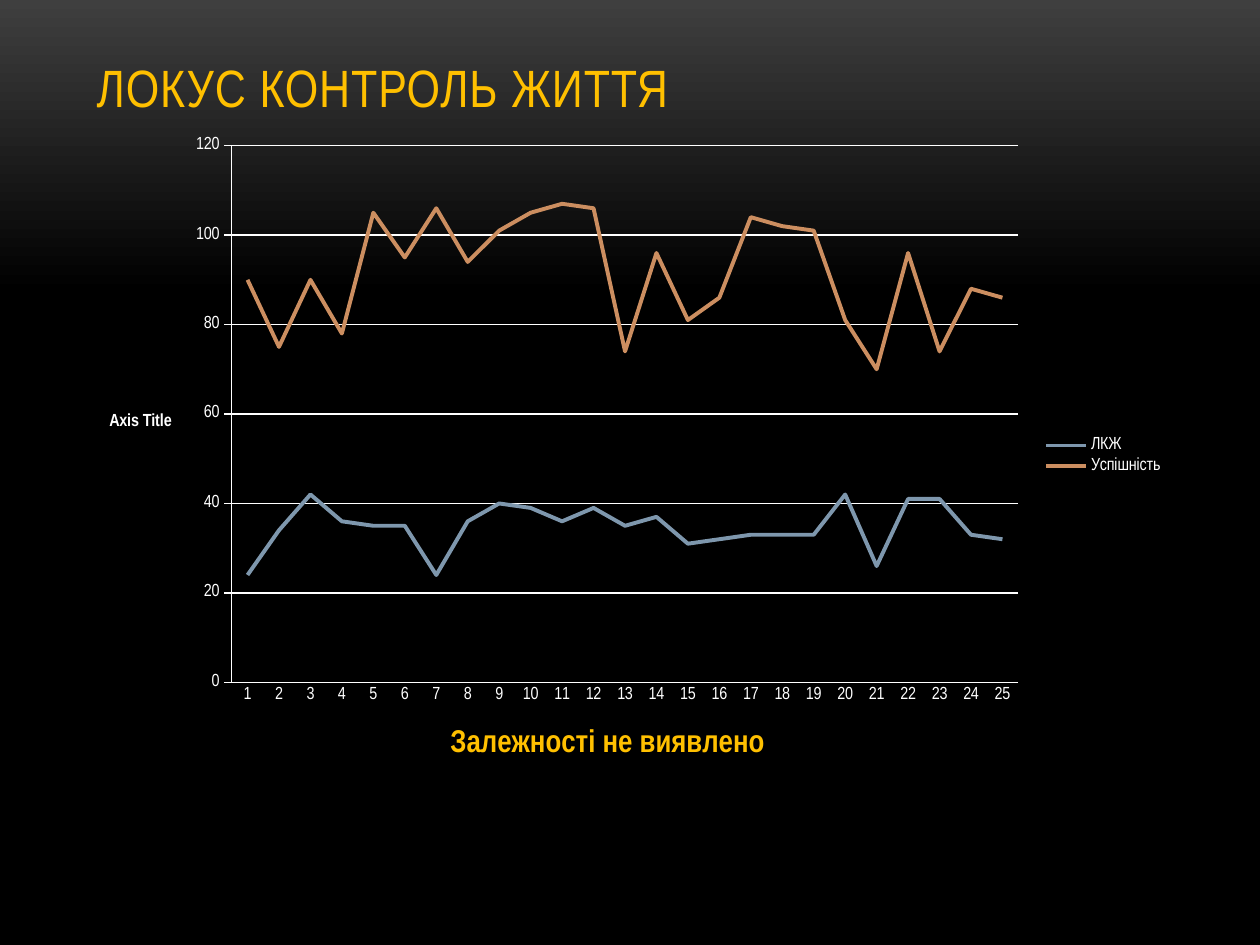
"""Build the slide comparing locus of control over life with academic success."""
from pptx import Presentation
from pptx.chart.data import CategoryChartData
from pptx.dml.color import RGBColor
from pptx.enum.chart import XL_CHART_TYPE, XL_LEGEND_POSITION, XL_TICK_MARK
from pptx.enum.text import MSO_ANCHOR
from pptx.oxml import parse_xml
from pptx.oxml.ns import nsdecls
from pptx.util import Cm, Pt

LINE_CHART = XL_CHART_TYPE.LINE
LEGEND_RIGHT = XL_LEGEND_POSITION.RIGHT
TICK_NONE, TICK_OUT = XL_TICK_MARK.NONE, XL_TICK_MARK.OUTSIDE
ANCHOR_BOTTOM = MSO_ANCHOR.BOTTOM

GOLD = RGBColor(0xFF, 0xC0, 0x00)
WHITE = RGBColor(0xFF, 0xFF, 0xFF)
BLACK = RGBColor(0x00, 0x00, 0x00)
CHARCOAL = RGBColor(0x3F, 0x3F, 0x3F)
STEEL = RGBColor(0x7E, 0x97, 0xAD)
COPPER = RGBColor(0xCC, 0x8E, 0x60)
FONT = "Arial Narrow"

SCORES = {
    "ЛКЖ": (STEEL, [24, 34, 42, 36, 35, 35, 24, 36, 40, 39, 36, 39, 35,
                    37, 31, 32, 33, 33, 33, 42, 26, 41, 41, 33, 32]),
    "Успішність": (COPPER, [90, 75, 90, 78, 105, 95, 106, 94, 101, 105, 107, 106, 74,
                            96, 81, 86, 104, 102, 101, 81, 70, 96, 74, 88, 86]),
}


def style_font(font, size, color, bold=False):
    for name, value in {"name": FONT, "size": Pt(size), "bold": bold}.items():
        setattr(font, name, value)
    font.color.rgb = color


def place(element, index, target="", **fractions):
    for old in element.xpath("c:layout"):
        element.remove(old)
    modes = "".join(f'<c:{key}Mode val="edge"/>' for key in "xy")
    sizes = "".join(f'<c:{key} val="{value}"/>' for key, value in fractions.items())
    element.insert(index, parse_xml(
        f'<c:layout {nsdecls("c")}><c:manualLayout>{target}{modes}{sizes}'
        "</c:manualLayout></c:layout>"))


deck = Presentation()
deck.slide_width, deck.slide_height = Cm(25.4), Cm(19.05)
slide = deck.slides.add_slide(deck.slide_layouts[6])

backdrop = slide.background.fill
backdrop.gradient()
backdrop.gradient_angle = 270
for stop, (position, color) in zip(backdrop.gradient_stops, [(0, CHARCOAL), (0.31, BLACK)]):
    stop.position = position
    stop.color.rgb = color

heading = slide.shapes.add_textbox(Cm(1.7), Cm(0.76), Cm(22), Cm(1.75)).text_frame
heading.word_wrap = True
heading.vertical_anchor = ANCHOR_BOTTOM
heading_run = heading.paragraphs[0].add_run()
heading_run.text = "ЛОКУС КОНТРОЛЬ ЖИТТЯ"
style_font(heading_run.font, 30, GOLD)
heading_run.font._element.set("spc", "50")

scores = CategoryChartData()
scores.categories = [str(number) for number in range(1, 26)]
for name, (color, values) in SCORES.items():
    scores.add_series(name, values)
chart = slide.shapes.add_chart(
    LINE_CHART, Cm(1.7), Cm(2.51), Cm(22.02), Cm(13.36), scores).chart
style_font(chart.font, 10, WHITE)
for name, value in {"has_title": False, "has_legend": True}.items():
    setattr(chart, name, value)
chart.legend.position = LEGEND_RIGHT
chart.legend.include_in_layout = False

plot = chart.plots[0]
plot.vary_by_categories = False
for series, (color, values) in zip(plot.series, SCORES.values()):
    series.smooth = False
    series.format.line.width = Pt(2.25)
    series.format.line.color.rgb = color

subjects, points = chart.category_axis, chart.value_axis
AXIS_FORMATS = [
    (subjects, {"major_tick_mark": TICK_NONE, "has_major_gridlines": False}),
    (points, {"major_tick_mark": TICK_OUT, "has_major_gridlines": True,
              "minimum_scale": 0, "maximum_scale": 120, "major_unit": 20}),
]
for axis, formats in AXIS_FORMATS:
    for name, value in {"minor_tick_mark": TICK_NONE, **formats}.items():
        setattr(axis, name, value)
for line in (subjects.format.line, points.format.line, points.major_gridlines.format.line):
    line.width = Pt(0.75)
    line.color.rgb = WHITE

for axis, wording, size, color, x, y in [
    (subjects, "Залежності не виявлено", 18, GOLD, 0.33, 0.9),
    (points, "Axis Title", 10, WHITE, 0.02, 0.43),
]:
    caption = axis.axis_title
    caption_run = caption.text_frame.paragraphs[0].add_run()
    caption_run.text = wording
    style_font(caption_run.font, size, color, bold=True)
    for body in caption.element.xpath(".//a:bodyPr"):
        body.set("rot", "0")
        body.set("vert", "horz")
    place(caption.element, 1, x=x, y=y)

plot_area = chart.element.xpath("c:chart/c:plotArea")[0] if hasattr(chart, "element") \
    else chart._chartSpace.xpath("c:chart/c:plotArea")[0]
place(plot_area, 0, '<c:layoutTarget val="inner"/>', x=0.135, y=0.032, w=0.72, h=0.81)

deck.save("out.pptx")
